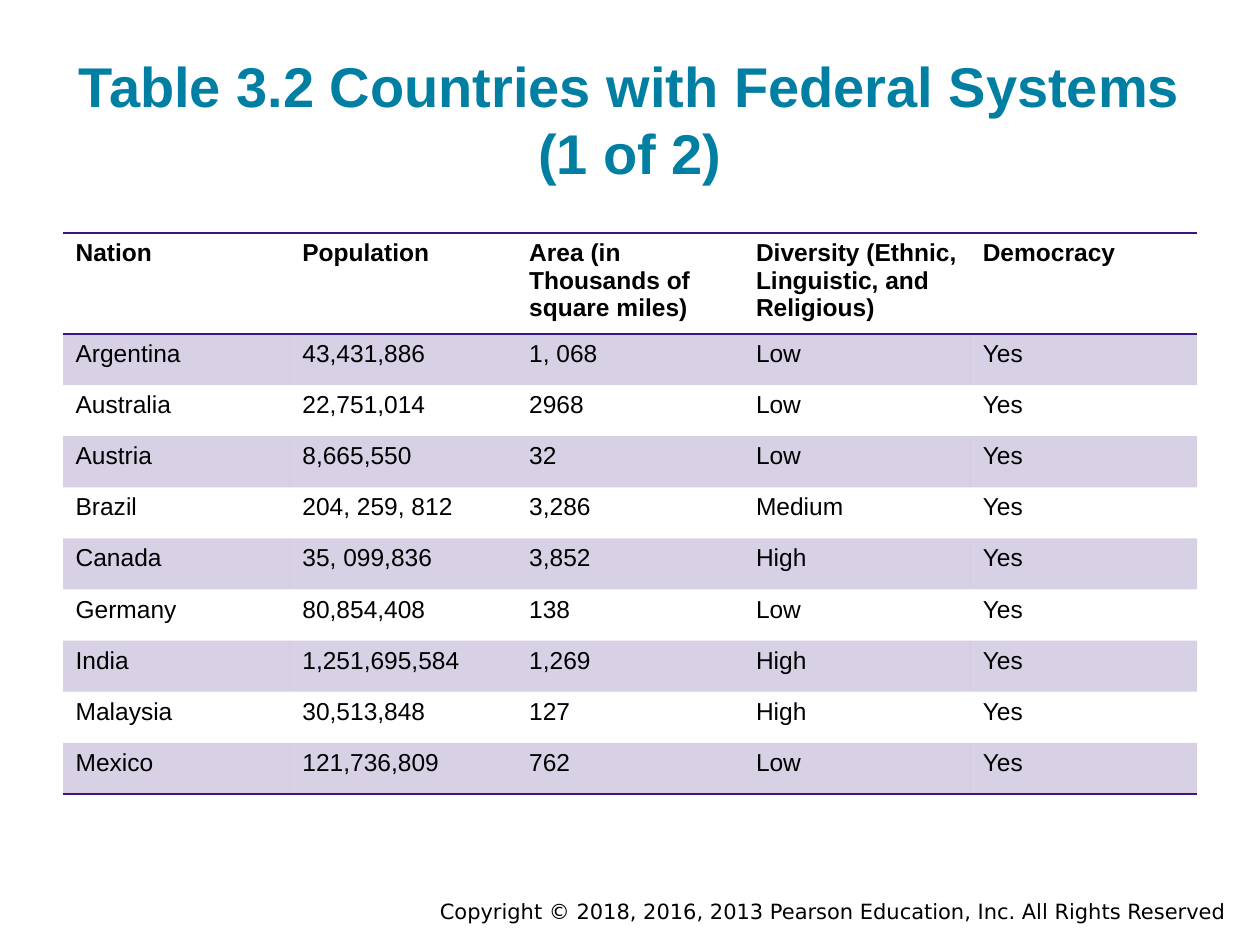
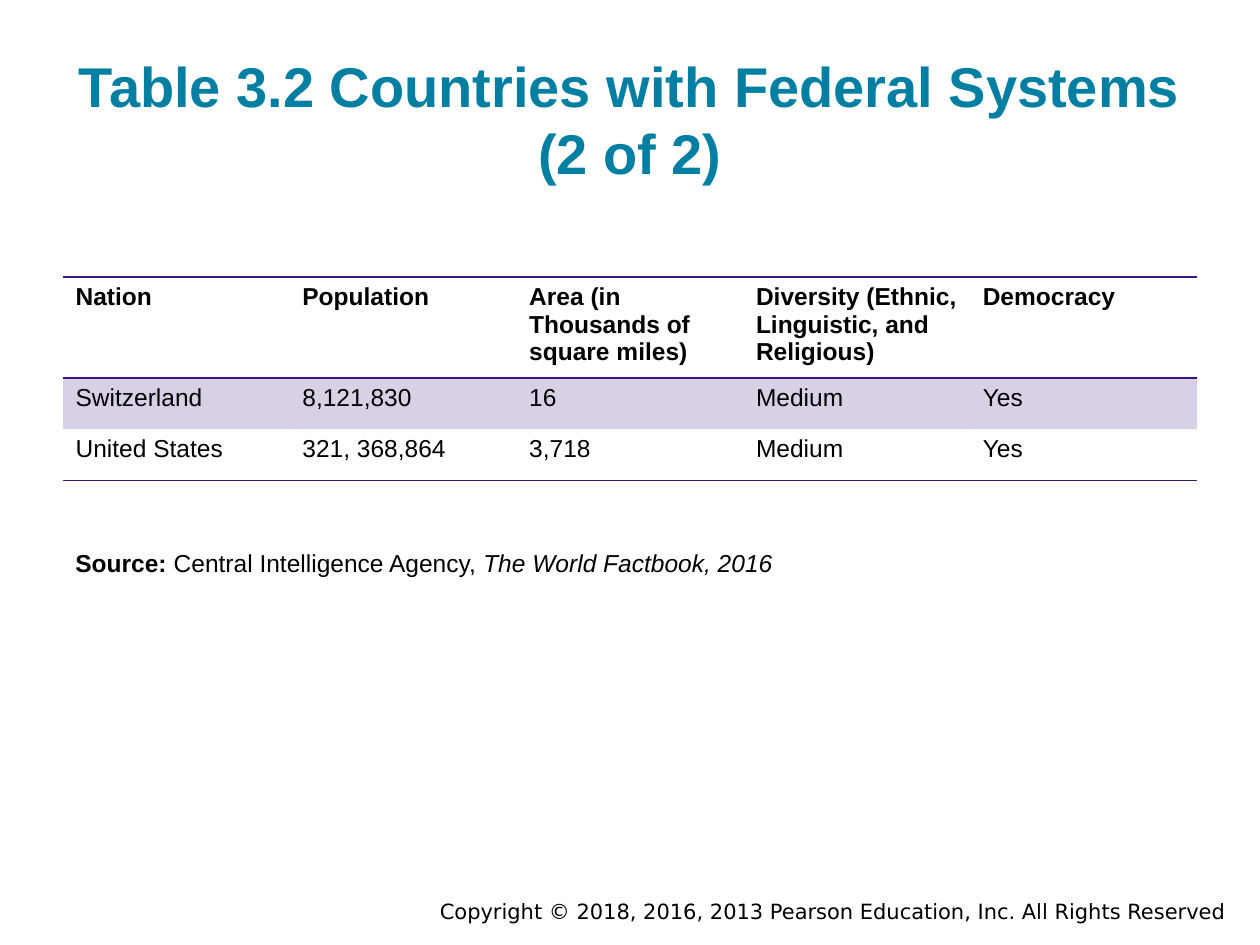
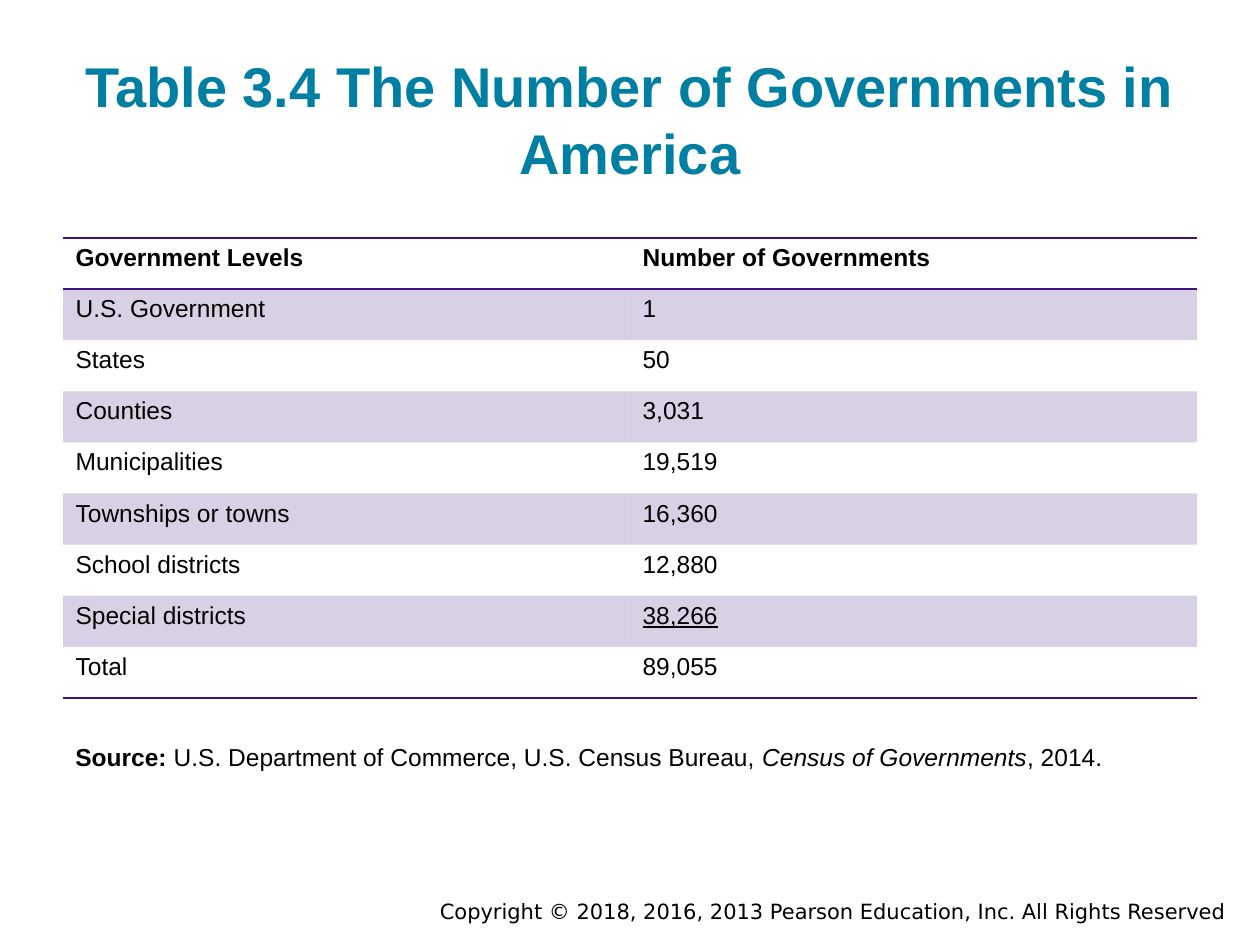
from dataclasses import dataclass

from lxml.etree import SubElement
from pptx import Presentation
from pptx.dml.color import RGBColor
from pptx.enum.text import MSO_ANCHOR, PP_ALIGN
from pptx.oxml import parse_xml
from pptx.oxml.ns import nsdecls, qn
from pptx.util import Pt


@dataclass(frozen=True)
class Theme:
    font: str = "Arial"
    footer_font: str = "DejaVu Sans"
    title_color: str = "007FA3"
    text_color: str = "000000"
    accent: str = "3C1581"
    band_alpha: int = 20000
    title_size: int = 32
    body_size: int = 14
    footer_size: int = 12
    rule_width: int = 1


THEME = Theme()
MARGIN = 36
CONTENT_WIDTH = 648
TITLE_BOTTOM = 113.4
ROW_HEIGHT = 29.2
NO_TABLE_STYLE = "{2D5ABB26-0587-4C30-8999-92F81FD0307C}"
FOOTER = "Copyright © 2018, 2016, 2013 Pearson Education, Inc. All Rights Reserved"

NATION_HEADER = (
    "Nation",
    "Population",
    "Area (in Thousands of square miles)",
    "Diversity (Ethnic, Linguistic, and Religious)",
    "Democracy",
)

# Each source is a list of (text, style) runs.
SLIDES = [
    {
        "title": "Table 3.2 Countries with Federal Systems (1 of 2)",
        "title_top": 26.6,
        "table_top": 133.2,
        "rows": [
            NATION_HEADER,
            ("Argentina", "43,431,886", "1, 068", "Low", "Yes"),
            ("Australia", "22,751,014", "2968", "Low", "Yes"),
            ("Austria", "8,665,550", "32", "Low", "Yes"),
            ("Brazil", "204, 259, 812", "3,286", "Medium", "Yes"),
            ("Canada", "35, 099,836", "3,852", "High", "Yes"),
            ("Germany", "80,854,408", "138", "Low", "Yes"),
            ("India", "1,251,695,584", "1,269", "High", "Yes"),
            ("Malaysia", "30,513,848", "127", "High", "Yes"),
            ("Mexico", "121,736,809", "762", "Low", "Yes"),
        ],
    },
    {
        "title": "Table 3.2 Countries with Federal Systems (2 of 2)",
        "title_top": 26.6,
        "table_top": 158.4,
        "rows": [
            NATION_HEADER,
            ("Switzerland", "8,121,830", "16", "Medium", "Yes"),
            ("United States", "321, 368,864", "3,718", "Medium", "Yes"),
        ],
        "source_top": 309.6,
        "source": [
            ("Source: ", "bold"),
            ("Central Intelligence Agency, ", None),
            ("The World Factbook, 2016", "italic"),
        ],
    },
    {
        "title": "Table 3.4 The Number of Governments in America",
        "title_top": 17.3,
        "table_top": 136,
        "rows": [
            ("Government Levels", "Number of Governments"),
            ("U.S. Government", "1"),
            ("States", "50"),
            ("Counties", "3,031"),
            ("Municipalities", "19,519"),
            ("Townships or towns", "16,360"),
            ("School districts", "12,880"),
            ("Special districts", "38,266"),
            ("Total", "89,055"),
        ],
        "underlined": "38,266",
        "source_top": 420.5,
        "source": [
            ("Source: ", "bold"),
            ("U.S. Department of Commerce, U.S. Census Bureau, ", None),
            ("Census of Governments", "italic"),
            (", 2014.", None),
        ],
    },
]


def add_text(slide, left, top, width, height, runs, size, color=THEME.text_color, font=THEME.font):
    """Add a wrapping one-paragraph box of (text, style) runs and return its text frame."""
    text_frame = slide.shapes.add_textbox(Pt(left), Pt(top), Pt(width), Pt(height)).text_frame
    text_frame.word_wrap = True
    for text, style in runs:
        run = text_frame.paragraphs[0].add_run()
        run.text = text
        run.font.name = font
        run.font.size = Pt(size)
        run.font.color.rgb = RGBColor.from_string(color)
        run.font.bold = style == "bold"
        run.font.italic = style == "italic"
    return text_frame


def style_cell(cell, ruled_sides, banded):
    """Draw rules on the given sides ("T", "B") and tint the cell if it is banded."""
    if banded:
        cell.fill.solid()
        cell.fill.fore_color.rgb = RGBColor.from_string(THEME.accent)
        color = cell._tc.tcPr.find(".//" + qn("a:srgbClr"))
        SubElement(color, qn("a:alpha"), val=str(THEME.band_alpha))
    else:
        cell.fill.background()
    for position, side in enumerate(ruled_sides):
        rule = parse_xml(
            f'<a:ln{side} {nsdecls("a")} w="{Pt(THEME.rule_width)}"><a:solidFill>'
            f'<a:srgbClr val="{THEME.accent}"/></a:solidFill></a:ln{side}>'
        )
        cell._tc.tcPr.insert(position, rule)


presentation = Presentation()
presentation.slide_width = Pt(720)
presentation.slide_height = Pt(540)

for content in SLIDES:
    slide = presentation.slides.add_slide(presentation.slide_layouts[6])

    footer = add_text(slide, 144, 509.8, 563.8, 21.6, [(FOOTER, None)],
                      THEME.footer_size, font=THEME.footer_font)
    footer.paragraphs[0].alignment = PP_ALIGN.RIGHT

    title_top = content["title_top"]
    title = add_text(slide, MARGIN, title_top, CONTENT_WIDTH, TITLE_BOTTOM - title_top,
                     [(content["title"], "bold")], THEME.title_size, THEME.title_color)
    title.paragraphs[0].alignment = PP_ALIGN.CENTER
    title.vertical_anchor = MSO_ANCHOR.BOTTOM
    title.margin_top = title.margin_bottom = Pt(7.2)

    rows = content["rows"]
    table = slide.shapes.add_table(
        len(rows), len(rows[0]), Pt(MARGIN), Pt(content["table_top"]),
        Pt(CONTENT_WIDTH), Pt(ROW_HEIGHT * len(rows)),
    ).table
    table._tbl.tblPr.find(qn("a:tableStyleId")).text = NO_TABLE_STYLE
    for row_index, row in enumerate(rows):
        is_header = row_index == 0
        is_last = row_index == len(rows) - 1
        ruled_sides = "TB" if is_header else "B" if is_last else ""
        for column_index, text in enumerate(row):
            cell = table.cell(row_index, column_index)
            cell.text_frame.text = text
            font = cell.text_frame.paragraphs[0].runs[0].font
            font.name = THEME.font
            font.size = Pt(THEME.body_size)
            font.bold = is_header
            font.underline = text == content.get("underlined")
            font.color.rgb = RGBColor.from_string(THEME.text_color)
            style_cell(cell, ruled_sides, banded=row_index % 2 == 1)

    if "source" in content:
        add_text(slide, MARGIN, content["source_top"], CONTENT_WIDTH, 24.5,
                 content["source"], THEME.body_size)

presentation.save("out.pptx")
